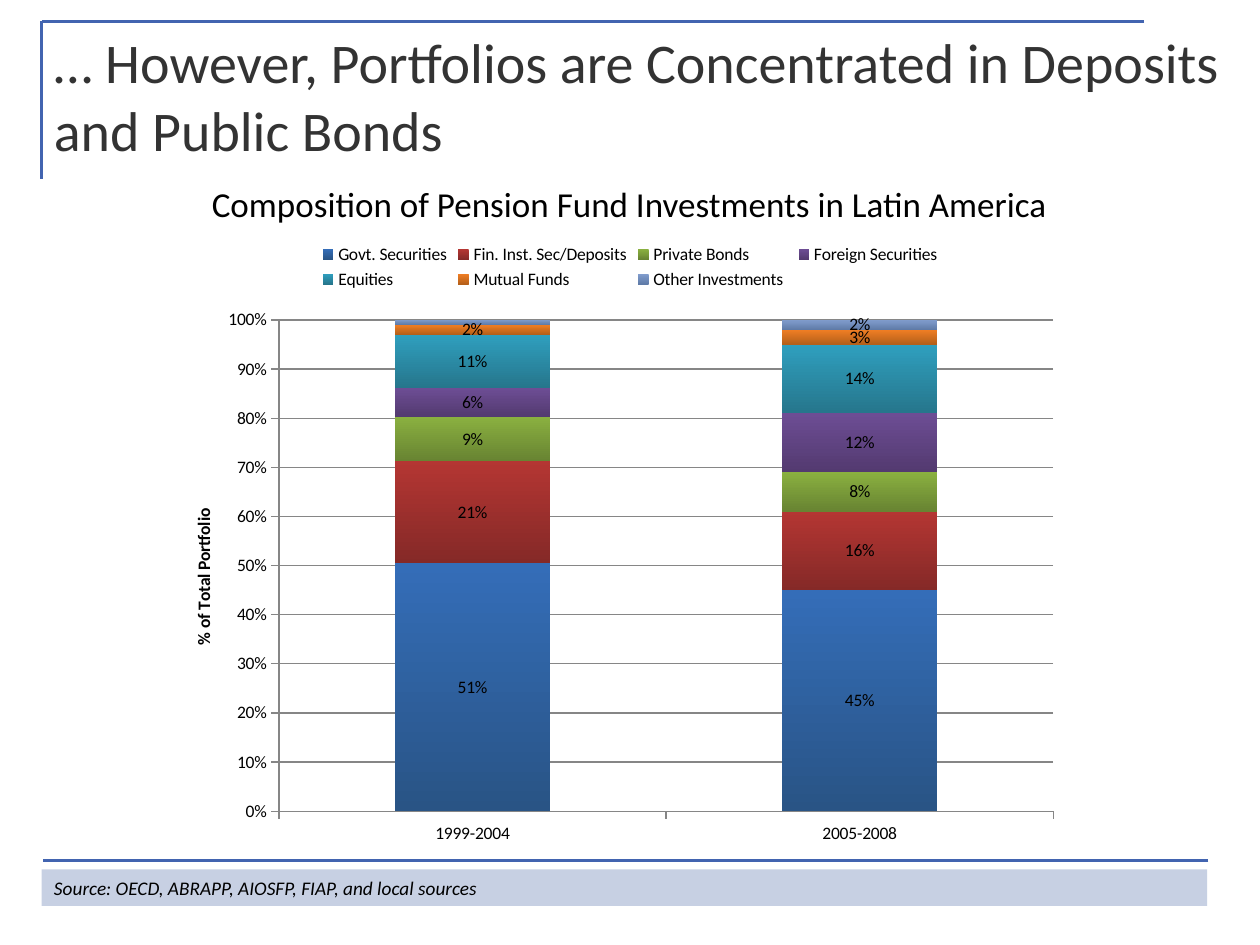
"""Build the slide on the composition of pension fund portfolios."""
from dataclasses import dataclass

import lxml.etree
import pptx
import pptx.chart.data
import pptx.dml.color
import pptx.enum.chart
import pptx.enum.shapes
import pptx.enum.text
import pptx.oxml
import pptx.oxml.ns
import pptx.util

Inches, Pt = pptx.util.Inches, pptx.util.Pt
ALIGN, ANCHOR = pptx.enum.text.PP_ALIGN, pptx.enum.text.MSO_ANCHOR
FONT, BLACK, BLUE, GRID = "Calibri", "000000", "4264B0", "868686"


@dataclass
class Rule:
    x1: float
    y1: float
    x2: float
    y2: float


@dataclass
class Holding:
    name: str
    values: tuple[float, float]
    top: str
    bottom: str
    unlabelled: tuple[int, ...] = ()


RULES = [
    Rule(9.08, 0.17, 0.33, 0.17),
    Rule(0.33, 0.17, 0.33, 1.42),
    Rule(9.59, 6.83, 0.34, 6.83),
]
PERIODS = ["1999-2004", "2005-2008"]
HOLDINGS = [
    Holding("Govt. Securities", (0.51, 0.45), "346DB8", "295485"),
    Holding("Fin. Inst. Sec/Deposits", (0.21, 0.16), "B43633", "852927"),
    Holding("Private Bonds", (0.09, 0.08), "8AB040", "688432"),
    Holding("Foreign Securities", (0.06, 0.12), "6D4D94", "533A70"),
    Holding("Equities", (0.11, 0.14), "2F9FBE", "26768C"),
    Holding("Mutual Funds", (0.02, 0.03), "F07E24", "B5601A"),
    Holding("Other Investments ", (0.01, 0.02), "819DCD", "5F7BA8", (0,)),
]


def rgb(value: str) -> pptx.dml.color.RGBColor:
    return pptx.dml.color.RGBColor.from_string(value)


def style_font(font, size: float, color: str = BLACK, bold: bool = False, italic: bool = False) -> None:
    font.name, font.size, font.bold, font.italic = FONT, Pt(size), bold, italic
    font.color.rgb = rgb(color)


def write(sp, text: str, size: float, color: str = BLACK, align=ALIGN.LEFT,
          anchor=ANCHOR.TOP, wrap: bool = True, italic: bool = False) -> None:
    tf = sp.text_frame
    tf.word_wrap, tf.vertical_anchor = wrap, anchor
    p = tf.paragraphs[0]
    p.text, p.alignment = text, align
    style_font(p.font, size, color, italic=italic)


def add_box(s, x: float, y: float, w: float, h: float):
    return s.shapes.add_textbox(Inches(x), Inches(y), Inches(w), Inches(h))


def add_rule(s, rule: Rule) -> None:
    sp = s.shapes.add_connector(
        pptx.enum.shapes.MSO_CONNECTOR.STRAIGHT,
        Inches(rule.x1), Inches(rule.y1), Inches(rule.x2), Inches(rule.y2))
    sp.line.color.rgb, sp.line.width = rgb(BLUE), Pt(1.5)
    lxml.etree.SubElement(sp._element.spPr, pptx.oxml.ns.qn("a:effectLst"))


def add_source_bar(s, text: str) -> None:
    sp = s.shapes.add_shape(pptx.enum.shapes.MSO_SHAPE.RECTANGLE,
                            Inches(0.33), Inches(6.9), Inches(9.25), Inches(0.29))
    sp.shadow.inherit = False
    sp.fill.solid()
    sp.fill.fore_color.rgb = rgb("C7D0E3")
    sp.line.fill.background()
    write(sp, text, 11, anchor=ANCHOR.MIDDLE, italic=True)


def style_series(series, holding: Holding) -> None:
    fill = series.format.fill
    fill.gradient()
    fill.gradient_angle = 270
    for stop, color in zip(fill.gradient_stops, (holding.top, holding.bottom)):
        stop.color.rgb = rgb(color)
    labels = series.data_labels
    labels.show_value = True
    labels.number_format, labels.number_format_is_linked = "0%", False
    style_font(labels.font, 10)
    ns = pptx.oxml.ns.nsdecls("c")
    for i in holding.unlabelled:
        labels._element.insert(0, pptx.oxml.parse_xml(
            f'<c:dLbl {ns}><c:idx val="{i}"/><c:delete val="1"/></c:dLbl>'))


def place_plot(chart, x: float, y: float, w: float, h: float) -> None:
    area = chart._chartSpace.chart.plotArea
    for old in area.findall(pptx.oxml.ns.qn("c:layout")):
        area.remove(old)
    sizes = "".join(f'<c:{tag} val="{v}"/>' for tag, v in zip("xywh", (x, y, w, h)))
    area.insert(0, pptx.oxml.parse_xml(
        f'<c:layout {pptx.oxml.ns.nsdecls("c")}><c:manualLayout>'
        '<c:layoutTarget val="inner"/><c:xMode val="edge"/><c:yMode val="edge"/>'
        f'{sizes}</c:manualLayout></c:layout>'))


def add_portfolio_chart(s) -> None:
    data = pptx.chart.data.CategoryChartData(number_format="0%")
    data.categories = PERIODS
    for holding in HOLDINGS:
        data.add_series(holding.name, holding.values)
    kinds = pptx.enum.chart
    chart = s.shapes.add_chart(kinds.XL_CHART_TYPE.COLUMN_STACKED_100, Inches(1.5), Inches(1.83),
                               Inches(7), Inches(5), data).chart
    style_font(chart.font, 10)
    chart.has_title = False
    chart.has_legend = True
    chart.legend.position = kinds.XL_LEGEND_POSITION.TOP
    chart.legend.include_in_layout = False
    style_font(chart.legend.font, 10)
    plot = chart.plots[0]
    plot.gap_width, plot.overlap, plot.vary_by_categories = 150, 100, False
    for series, holding in zip(plot.series, HOLDINGS):
        style_series(series, holding)

    value_axis = chart.value_axis
    value_axis.minimum_scale, value_axis.maximum_scale, value_axis.major_unit = 0, 1, 0.1
    value_axis.tick_labels.number_format = "0%"
    value_axis.tick_labels.number_format_is_linked = False
    value_axis.has_major_gridlines = True
    p = value_axis.axis_title.text_frame.paragraphs[0]
    p.text = "% of Total Portfolio"
    style_font(p.font, 10, bold=True)
    for axis in (value_axis, chart.category_axis):
        axis.major_tick_mark = kinds.XL_TICK_MARK.OUTSIDE
        style_font(axis.tick_labels.font, 10)
    for part in (value_axis, chart.category_axis, value_axis.major_gridlines):
        part.format.line.color.rgb, part.format.line.width = rgb(GRID), Pt(0.75)
    place_plot(chart, 0.102, 0.142, 0.878, 0.78)


def main() -> None:
    prs = pptx.Presentation()
    prs.slide_width, prs.slide_height = Inches(10), Inches(7.5)
    s = prs.slides.add_slide(prs.slide_layouts[6])
    for rule in RULES:
        add_rule(s, rule)
    write(add_box(s, 1.55, 1.4, 6.89, 0.44),
          "Composition of Pension Fund Investments in Latin America",
          20, align=ALIGN.CENTER, wrap=False)
    add_portfolio_chart(s)
    write(add_box(s, 0.33, 0.17, 9.5, 1.17),
          "… However, Portfolios are Concentrated in Deposits and Public Bonds",
          32, "333333", anchor=ANCHOR.MIDDLE)
    add_source_bar(s, "Source: OECD, ABRAPP, AIOSFP, FIAP, and local sources")
    prs.save("out.pptx")


if __name__ == "__main__":
    main()
